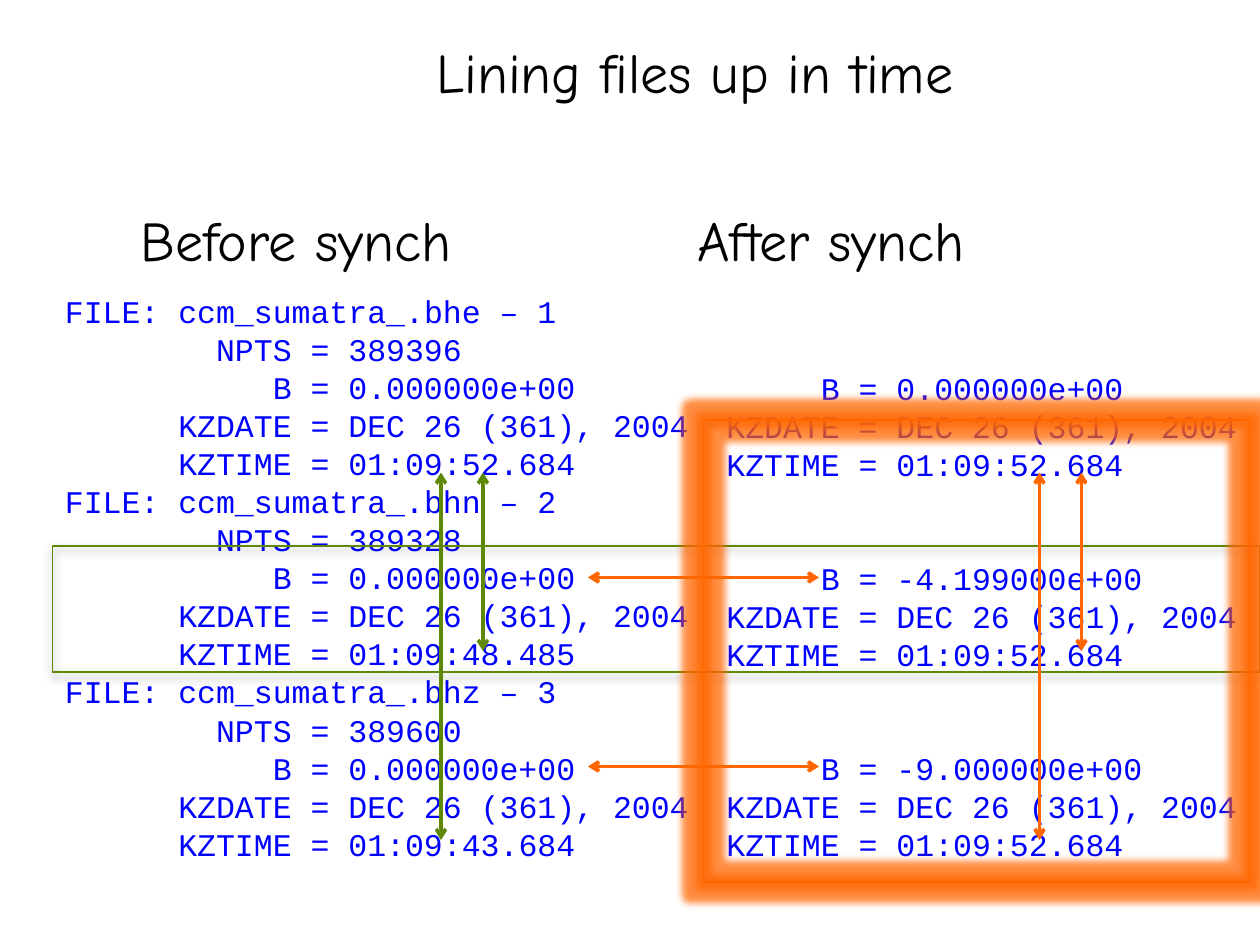
from lxml.etree import SubElement
from pptx import Presentation
from pptx.dml.color import RGBColor
from pptx.enum.shapes import MSO_CONNECTOR, MSO_SHAPE
from pptx.enum.text import PP_ALIGN
from pptx.oxml.ns import qn
from pptx.util import Inches, Pt

COLUMNS, ROWS = 120, 90
WIDTH, HEIGHT = Inches(10), Inches(7.5)
BLUE, GREEN, ORANGE, BLACK = "0000FF", "5E8805", "FF6600", "000000"
HEADING = dict(font="Comic Neue", size=32, color=BLACK)
LISTING = dict(font="Courier New", size=18, color=BLUE)
CHARACTER = Pt(10.8)
LINE_PITCH = 21.75
DATE = "DEC 26 (361), 2004"
BEFORE = [
    ("bhe – 1", "389396", "01:09:52.684"),
    ("bhn – 2", "389328", "01:09:48.485"),
    ("bhz – 3", "389600", "01:09:43.684"),
]
AFTER = ["0.000000e+00", "-4.199000e+00", "-9.000000e+00"]


def across(column):
    return round(WIDTH * column / COLUMNS)


def down(row):
    return round(HEIGHT * row / ROWS)


def paint(color_format, value):
    color_format.rgb = RGBColor.from_string(value)


def add_text(page, area, lines, font, size, color, align=PP_ALIGN.LEFT, pitch=None):
    left, top, width, height = area
    box = page.shapes.add_textbox(across(left), down(top), across(width), down(height))
    frame = box.text_frame
    frame.word_wrap = True
    for index, (text, indent, gap) in enumerate(lines):
        para = frame.paragraphs[0] if index == 0 else frame.add_paragraph()
        para.alignment = align
        para.space_before = Pt(gap)
        if pitch:
            para.line_spacing = Pt(pitch)
        if indent:
            properties = para._p.get_or_add_pPr()
            properties.set("marL", str(indent * CHARACTER))
            properties.set("indent", "0")
        span = para.add_run()
        span.text = text
        span.font.name = font
        span.font.size = Pt(size)
        paint(span.font.color, color)


def add_frame(page, area, color, effect, opacity, effect_color, **settings):
    left, top, width, height = area
    box = page.shapes.add_shape(
        MSO_SHAPE.RECTANGLE, across(left), down(top), across(width), down(height)
    )
    box.fill.background()
    paint(box.line.color, color)
    box.line.width = Pt(1)
    box.shadow.inherit = False
    effects = box._element.spPr.find(qn("a:effectLst"))
    node = SubElement(effects, qn("a:" + effect), {k: str(v) for k, v in settings.items()})
    shade = SubElement(node, qn("a:srgbClr"), val=effect_color)
    SubElement(shade, qn("a:alpha"), val=str(opacity * 1000))


def add_arrow(page, start, end, color):
    arrow = page.shapes.add_connector(
        MSO_CONNECTOR.STRAIGHT,
        across(start[0]), down(start[1]), across(end[0]), down(end[1]),
    )
    paint(arrow.line.color, color)
    arrow.line.width = Pt(2)
    outline = arrow.line._get_or_add_ln()
    for end_name in ("headEnd", "tailEnd"):
        SubElement(outline, qn("a:" + end_name), type="arrow")
    SubElement(arrow._element.spPr, qn("a:effectLst"))


def before_lines():
    lines = []
    for name, points, time in BEFORE:
        lines += [
            (f"FILE: ccm_sumatra_.{name}", 0, 0),
            (f"NPTS = {points}", 8, 0),
            ("B = 0.000000e+00", 11, 0),
            (f"KZDATE = {DATE}", 6, 0),
            (f"KZTIME = {time}", 6, 0),
        ]
    return lines


def after_lines():
    lines = []
    for index, begin in enumerate(AFTER):
        lines += [
            (f"B = {begin}", 5, 2 * LINE_PITCH if index else 0),
            (f"KZDATE = {DATE}", 0, 0),
            (f"KZTIME = {BEFORE[0][2]}", 0, 0),
        ]
    return lines


def main():
    deck = Presentation()
    deck.slide_width, deck.slide_height = WIDTH, HEIGHT
    page = deck.slides.add_slide(deck.slide_layouts[6])

    add_text(page, (5, 27.2, 64, 55.7), before_lines(), pitch=LINE_PITCH, **LISTING)
    add_text(page, (68, 34.5, 52, 48.5), after_lines(), pitch=LINE_PITCH, **LISTING)
    for left, text in ((12.2, "Before synch"), (65.2, "After synch")):
        add_text(page, (left, 19, 50, 7.7), [(text, 0, 0)], **HEADING)

    add_frame(page, (5, 52, 115, 12), GREEN, "outerShdw", 40, BLACK,
              blurRad=Pt(5), dist=Pt(2), dir=90 * 60000, rotWithShape=0)
    add_frame(page, (67, 40, 52, 44), ORANGE, "glow", 75, ORANGE, rad=Pt(8))
    add_text(page, (12.4, 3, 107.6, 7.7), [("Lining files up in time", 0, 0)],
             align=PP_ALIGN.CENTER, **HEADING)

    for bottom, offset, row in ((62, 4, 55), (80, 0, 73)):
        for column, color in ((42, GREEN), (99, ORANGE)):
            add_arrow(page, (column + offset, 45), (column + offset, bottom), color)
        add_arrow(page, (56, row), (78, row), ORANGE)

    deck.save("out.pptx")


if __name__ == "__main__":
    main()
